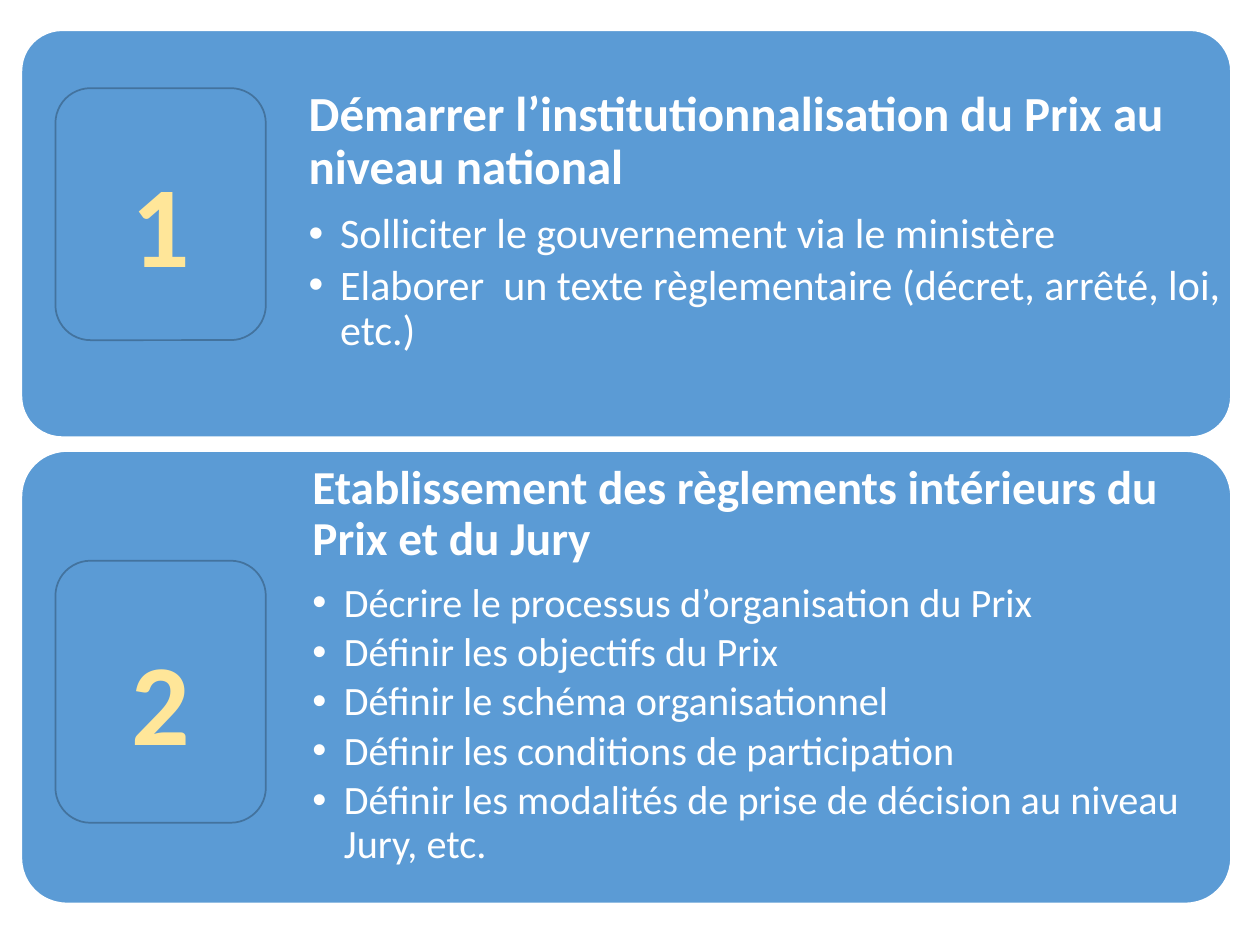
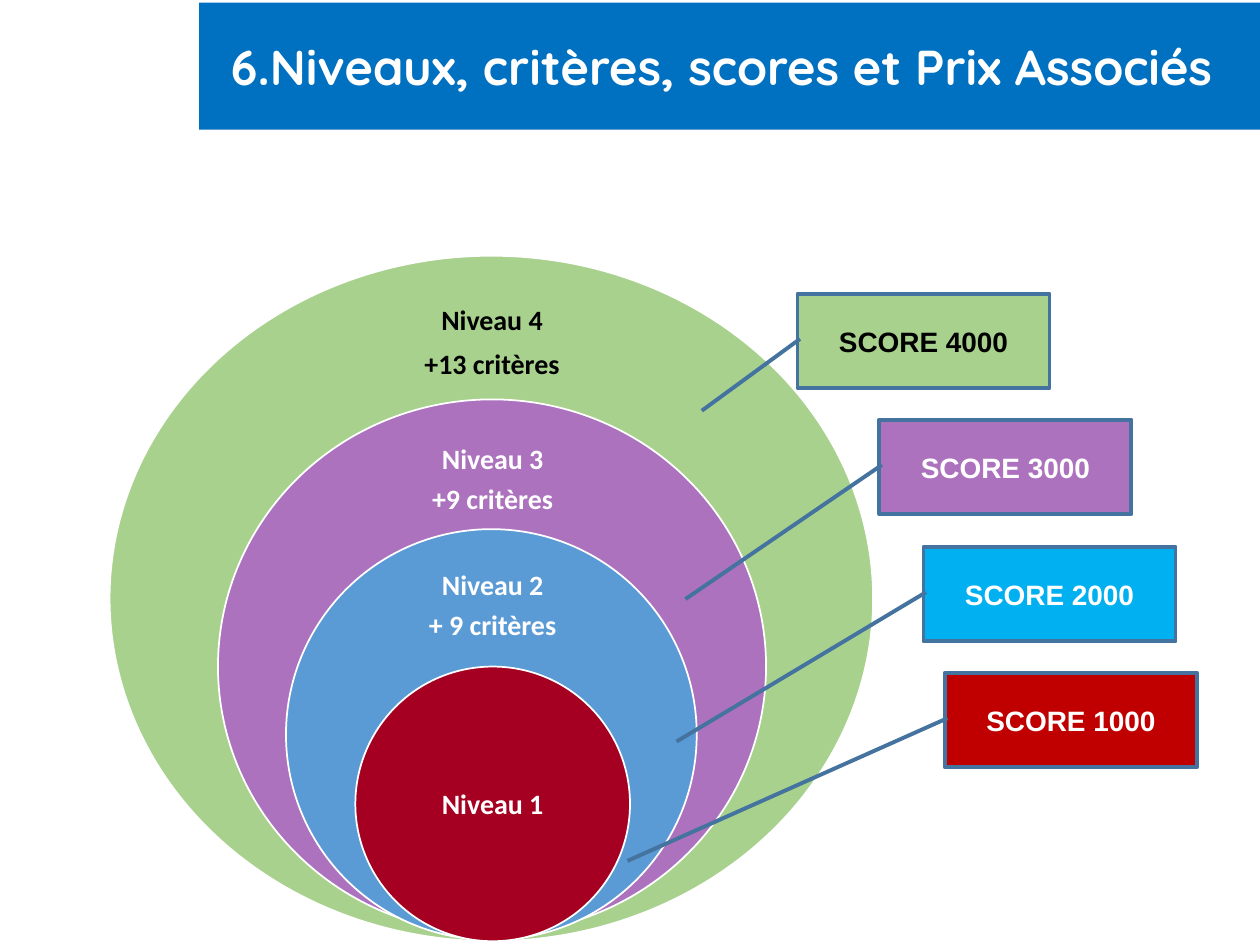
from lxml.etree import SubElement
from pptx import Presentation
from pptx.dml.color import RGBColor
from pptx.enum.shapes import MSO_SHAPE
from pptx.enum.text import MSO_ANCHOR, MSO_AUTO_SIZE, PP_ALIGN
from pptx.oxml.ns import qn
from pptx.util import Emu, Pt

PX = 9144  # one px is a hundredth of an inch
COLORS = {
    "white": "FFFFFF", "black": "000000", "blue": "5B9BD5", "band": "0070C0",
    "edge": "43739E", "gold": "FFE699", "green": "A9D18E", "purple": "AC72BE",
    "sky": "00B0F0", "red": "C00000", "wine": "A50021",
}

# Step panels: number, top, height, insets, heading size, list size,
# badge top, badge height, heading, list
STEPS = [
    ("1", 24, 323, (7, 47, 7, 7), 28, 24, 70, 200,
     "Démarrer l’institutionnalisation du Prix au niveau national",
     ["Solliciter le gouvernement via le ministère",
      "Elaborer  un texte règlementaire (décret, arrêté, loi, etc.)"]),
    ("2", 358, 359, (10, 10, 10, 10), 27, 23, 445, 208,
     "Etablissement des règlements intérieurs du Prix et du Jury",
     ["Décrire le processus d’organisation du Prix",
      "Définir les objectifs du Prix",
      "Définir le schéma organisationnel",
      "Définir les conditions de participation",
      "Définir les modalités de prise de décision au niveau Jury, etc."]),
]

# Levels: oval box, fill, label box, ink, line spacing, label lines
LEVELS = [
    ((87, 203, 606, 544), "green", (306, 230, 169, 82), "black", 1.0,
     ["Niveau 4", "+13 critères"]),
    ((173, 317, 435, 424), "purple", (315, 343, 152, 76), "white", 0.9,
     ["Niveau 3", "+9 critères"]),
    ((227, 420, 326, 326), "blue", (315, 445, 152, 73), "white", 0.9,
     ["Niveau 2", "+ 9 critères"]),
    ((282, 529, 218, 218), "wine", (314, 583, 154, 109), "white", 1.0,
     ["Niveau 1"]),
]

# Scores: text, left, top, fill, ink, pointer end (y, x as shares of the box)
SCORES = [
    ("SCORE 4000", 633, 233, "green", "black", (1.24, -0.38)),
    ("SCORE 3000", 698, 333, "purple", "white", (1.9, -0.77)),
    ("SCORE 2000", 733, 434, "sky", "white", (2.06, -0.98)),
    ("SCORE 1000", 750, 534, "red", "white", (1.99, -1.26)),
]


def px(n):
    return Emu(n * PX)


def rgb(name):
    return RGBColor.from_string(COLORS[name])


def place(shape, box):
    shape.left, shape.top, shape.width, shape.height = map(px, box)


def frame(shape, insets, anchor=MSO_ANCHOR.MIDDLE):
    """Set up the text frame of any shape."""
    text = shape.text_frame
    text.word_wrap = True
    text.auto_size = MSO_AUTO_SIZE.NONE
    text.vertical_anchor = anchor
    (text.margin_left, text.margin_top,
     text.margin_right, text.margin_bottom) = map(px, insets)
    return text


def style(para, size, ink, font="Calibri", bold=True,
          align=PP_ALIGN.CENTER, after=0.0, lead=1.0):
    """Format a paragraph; after is a share of the text size."""
    para.alignment = align
    para.line_spacing = lead
    para.space_before = Pt(0)
    para.space_after = Pt(round(size * after, 1))
    for run in para.runs:
        run.font.size = Pt(size)
        run.font.name = font
        run.font.bold = bold
        run.font.color.rgb = rgb(ink)


def bullet(para, indent, char=None):
    """Set a hanging indent with a bullet, or switch the bullet off."""
    props = para._p.get_or_add_pPr()
    props.set("marL", str(indent * PX))
    props.set("indent", str(-indent * PX))
    if char:
        SubElement(props, qn("a:buChar"), char=char)
    else:
        SubElement(props, qn("a:buNone"))


def draw(slide, kind, box, fill, line="white", width=1):
    shape = slide.shapes.add_shape(kind, *map(px, box))
    shape.shadow.inherit = False
    shape.fill.solid()
    shape.fill.fore_color.rgb = rgb(fill)
    shape.line.color.rgb = rgb(line)
    shape.line.width = Pt(width)
    return shape


def panel(slide, body, step):
    """Rounded panel with a numbered badge and a headed list."""
    num, top, high, insets, big, small, y, tall, head, items = step
    back = draw(slide, MSO_SHAPE.ROUNDED_RECTANGLE, (17, top, 960, high), "blue")
    back.adjustments[0] = 0.1
    body.element.addprevious(back.element)

    # Heading and list
    place(body, (238, top, 739, high))
    text = frame(body, insets, MSO_ANCHOR.TOP)
    text.text = "\n".join([head] + items)
    title, *rows = text.paragraphs
    style(title, big, "white", align=PP_ALIGN.LEFT, after=0.35, lead=0.9)
    bullet(title, 0)
    for row in rows:
        row.level = 1
        style(row, small, "white", bold=False, align=PP_ALIGN.LEFT,
              after=0.15, lead=0.9)
        bullet(row, 25, "•")

    # Badge
    badge = draw(slide, MSO_SHAPE.ROUNDED_RECTANGLE, (44, y, 167, tall),
                 "blue", "edge")
    text = frame(badge, (10, 17, 10, 5))
    text.text = num
    style(text.paragraphs[0], 66, "gold")


def level(slide, oval, fill, box, ink, lead, lines):
    """Nested oval with its label."""
    draw(slide, MSO_SHAPE.OVAL, oval, fill)
    label = slide.shapes.add_textbox(*map(px, box))
    text = frame(label, (12, 12, 12, 12))
    text.text = "\n".join(lines)
    for para in text.paragraphs:
        style(para, 16, ink, after=0.35, lead=lead)


def score(slide, name, left, top, fill, ink, end):
    """Callout box whose pointer reaches into a level."""
    box = draw(slide, MSO_SHAPE.LINE_CALLOUT_1, (left, top, 200, 75),
               fill, "edge", 2.25)
    for i, value in enumerate((0.48, 0.01, *end)):
        box.adjustments[i] = value
    text = frame(box, (10, 5, 10, 5))
    text.text = name
    style(text.paragraphs[0], 16, ink, "Arial")


def band(slide, name):
    """Title on a blue band."""
    title = slide.shapes.title
    place(title, (158, 2, 842, 101))
    title.fill.solid()
    title.fill.fore_color.rgb = rgb("band")
    text = frame(title, (7, 4, 38, 4))
    text.text = name
    style(text.paragraphs[0], 28, "white", "Quicksand", align=PP_ALIGN.RIGHT)


def main():
    deck = Presentation()
    deck.slide_width, deck.slide_height = px(1000), px(750)

    # Steps
    slide = deck.slides.add_slide(deck.slide_layouts[3])
    title, *bodies = slide.placeholders
    title.element.getparent().remove(title.element)
    for body, step in zip(bodies, STEPS):
        panel(slide, body, step)

    # Levels and scores
    slide = deck.slides.add_slide(deck.slide_layouts[5])
    band(slide, "6.Niveaux, critères, scores et Prix Associés")
    for item in LEVELS:
        level(slide, *item)
    for item in SCORES:
        score(slide, *item)

    deck.save("out.pptx")


if __name__ == "__main__":
    main()
